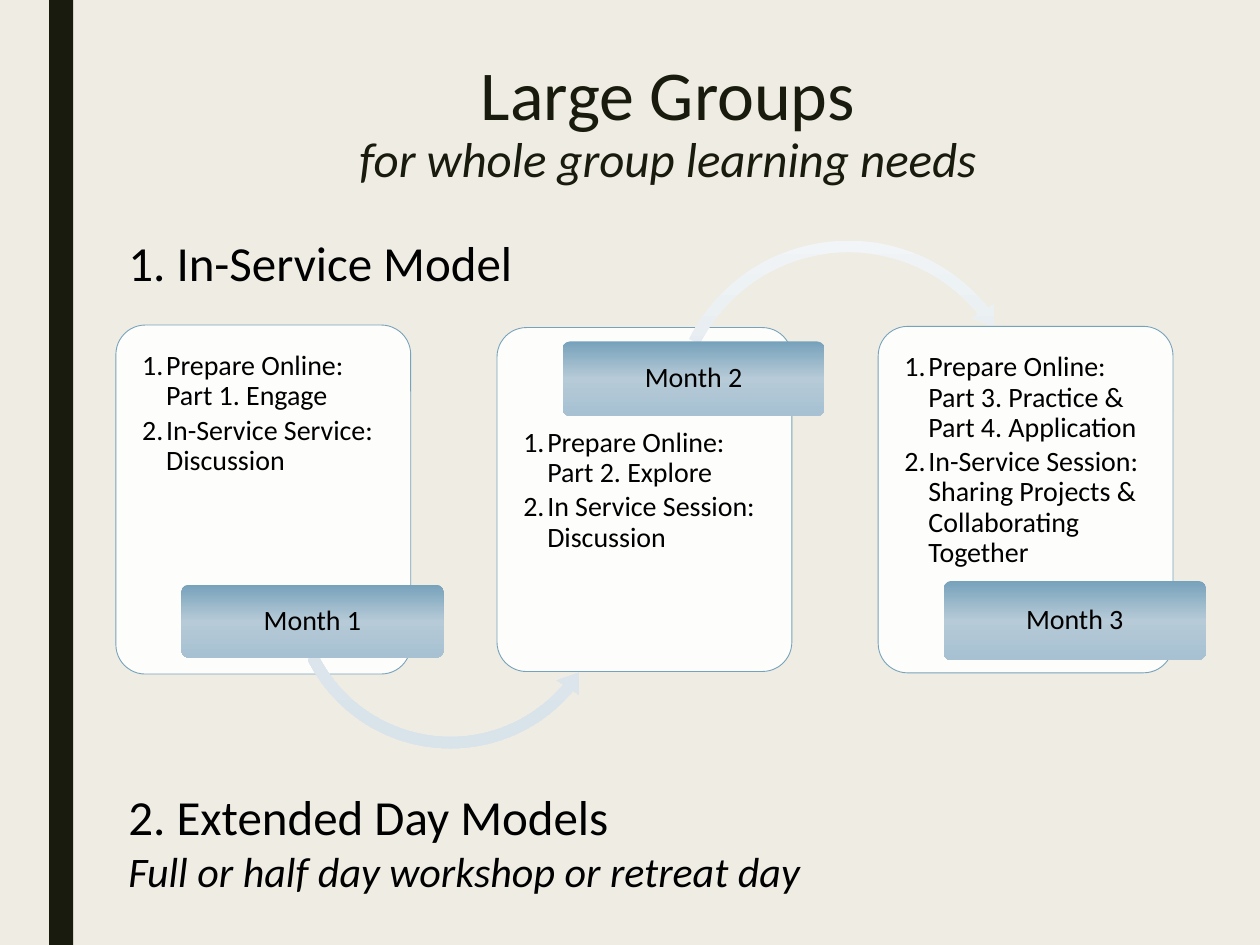
from lxml import etree
from pptx import Presentation
from pptx import util as u
from pptx.dml.color import RGBColor
from pptx.enum import shapes, text
from pptx.oxml import parse_xml
from pptx.oxml.ns import nsdecls, qn

INK, BLACK, BLUE, PAPER = "191B0E", "000000", "77A2BB", "EFEDE3"
LABEL_STOPS = [BLUE, "B6CAD7", "A7C1D2"]
ARROW_STOPS = ["F2F5F7", "DFE7ED", "D9E3EA"]


def color(value):
    return RGBColor.from_string(value)


def apply(target, values):
    for name, value in values.items():
        setattr(target, name, value)


class Deck:
    columns, rows = 100, 75
    font = "Calibri"

    def __init__(self):
        self.presentation = Presentation()
        apply(self.presentation, {"slide_width": u.Inches(10), "slide_height": u.Inches(7.5)})
        self.slide = self.presentation.slides.add_slide(self.presentation.slide_layouts[5])
        fill = self.slide.background.fill
        fill.solid()
        fill.fore_color.rgb = color(PAPER)

    def across(self, columns):
        return round(self.presentation.slide_width * columns / self.columns)

    def down(self, rows):
        return round(self.presentation.slide_height * rows / self.rows)

    def box(self, left, top, width, height):
        return self.across(left), self.down(top), self.across(width), self.down(height)

    def run(self, paragraph, words, size, ink=BLACK, italic=False):
        run = paragraph.add_run()
        run.text = words
        apply(run.font, {"name": self.font, "size": u.Pt(size), "italic": italic})
        run.font.color.rgb = color(ink)

    def title(self, place, heading, subtitle):
        shape = self.slide.shapes.title
        apply(shape, dict(zip(("left", "top", "width", "height"), self.box(*place))))
        shape.text_frame.vertical_anchor = text.MSO_ANCHOR.MIDDLE
        paragraph = shape.text_frame.paragraphs[0]
        apply(paragraph, {"alignment": text.PP_ALIGN.CENTER, "line_spacing": 0.89})
        self.run(paragraph, heading, 40, INK)
        paragraph.add_line_break()
        self.run(paragraph, subtitle, 28, INK, True)

    def heading(self, place, lines):
        frame = self.slide.shapes.add_textbox(*self.box(*place)).text_frame
        frame.word_wrap = True
        for index, (words, size, italic) in enumerate(lines):
            paragraph = frame.add_paragraph() if index else frame.paragraphs[0]
            self.run(paragraph, words, size, italic=italic)

    def shape(self, kind, place, adjustments=(), fill=None, stops=None, line=None):
        shape = self.slide.shapes.add_shape(kind, *self.box(*place))
        shape.shadow.inherit = False
        for index, value in enumerate(adjustments):
            shape.adjustments[index] = value
        if stops:
            self.gradient(shape, stops)
        else:
            shape.fill.solid()
            shape.fill.fore_color.rgb = color(fill)
        if line:
            shape.line.color.rgb = color(line)
            shape.line.width = u.Pt(0.5)
        else:
            shape.line.fill.background()
        return shape

    def gradient(self, shape, stops):
        marks = "".join(
            f'<a:gs pos="{index * 50000}"><a:srgbClr val="{stop}"/></a:gs>'
            for index, stop in enumerate(stops)
        )
        geometry = shape._element.spPr.find(qn("a:prstGeom"))
        geometry.addnext(parse_xml(
            f'<a:gradFill {nsdecls("a")}><a:gsLst>{marks}</a:gsLst>'
            '<a:lin ang="5400000" scaled="0"/></a:gradFill>'
        ))

    def card(self, place, items, top_margin):
        shape = self.shape(shapes.MSO_SHAPE.ROUNDED_RECTANGLE, place, [0.1], fill="FFFFFF", line=BLUE)
        white = shape._element.spPr.find(qn("a:solidFill")).find(qn("a:srgbClr"))
        etree.SubElement(white, qn("a:alpha"), val="90000")
        margin = self.across(1.4)
        frame = shape.text_frame
        apply(frame, {
            "word_wrap": True, "vertical_anchor": text.MSO_ANCHOR.TOP,
            "margin_left": margin, "margin_right": margin,
            "margin_top": self.down(top_margin), "margin_bottom": margin,
        })
        indent = self.across(1.9)
        for index, words in enumerate(items):
            paragraph = frame.add_paragraph() if index else frame.paragraphs[0]
            apply(paragraph, {"alignment": text.PP_ALIGN.LEFT, "line_spacing": 0.9,
                              "space_after": u.Pt(2.4)})
            self.run(paragraph, words, 16)
            properties = paragraph._p.get_or_add_pPr()
            properties.set("marL", str(indent))
            properties.set("indent", str(-indent))
            etree.SubElement(properties, qn("a:buFont"), typeface="+mj-lt")
            etree.SubElement(properties, qn("a:buAutoNum"), type="arabicPeriod")

    def label(self, place, words):
        shape = self.shape(shapes.MSO_SHAPE.ROUNDED_RECTANGLE, place, [0.1], stops=LABEL_STOPS)
        apply(shape.text_frame, {
            "word_wrap": True, "vertical_anchor": text.MSO_ANCHOR.MIDDLE,
            "margin_left": self.across(0.3), "margin_right": self.across(0.3),
            "margin_top": self.down(0.2), "margin_bottom": self.down(0.2),
        })
        paragraph = shape.text_frame.paragraphs[0]
        apply(paragraph, {"alignment": text.PP_ALIGN.CENTER, "line_spacing": 0.9})
        self.run(paragraph, words, 16)

    def arrow(self, kind, place, adjustments):
        self.shape(kind, place, adjustments, stops=ARROW_STOPS)


def main():
    deck = Deck()
    deck.shape(shapes.MSO_SHAPE.RECTANGLE, (3.9, 0, 1.9, 75), fill=INK)
    deck.title((6, 1.8, 94, 16.2), "Large Groups", "for whole group learning needs")

    months = [
        (27.7, 1.4, 46.4, 5.8,
         ["Prepare Online: Part 1. Engage", "In-Service Service: Discussion"],
         (shapes.MSO_SHAPE.LEFT_CIRCULAR_ARROW, (22.5, 33.5, 26.5, 26.5),
          [0.034, 4.204, 23.978, 92.264, 0.04])),
        (27.3, 7.3, 27.1, 5.9,
         ["Prepare Online: Part 2. Explore", "In Service Session: Discussion"],
         (shapes.MSO_SHAPE.CIRCULAR_ARROW, (52.6, 18.5, 29.5, 29.5),
          [0.031, 3.749, 192.773, 124.032, 0.036])),
        (27.5, 1.4, 46.1, 6.3,
         ["Prepare Online: Part 3. Practice & Part 4. Application",
          "In-Service Session: Sharing Projects & Collaborating Together"],
         None),
    ]
    first_left, pitch, middle = 9.2, 30.25, 39.65
    for index, (height, margin, label_top, label_height, items, arrow) in enumerate(months):
        left = first_left + index * pitch
        deck.card((left, middle - height / 2, 23.4, height), items, margin)
        if arrow:
            deck.arrow(*arrow)
        deck.label((left + 5.2, label_top, 20.8, label_height), f"Month {index + 1}")

    deck.heading((first_left, 18, 35.1, 5.7), [("1. In-Service Model", 28, False)])
    deck.heading((first_left, 61.9, 87.8, 9.8), [
        ("2. Extended Day Models", 28, False),
        ("Full or half day workshop or retreat day", 24, True),
    ])
    deck.presentation.save("out.pptx")


if __name__ == "__main__":
    main()
